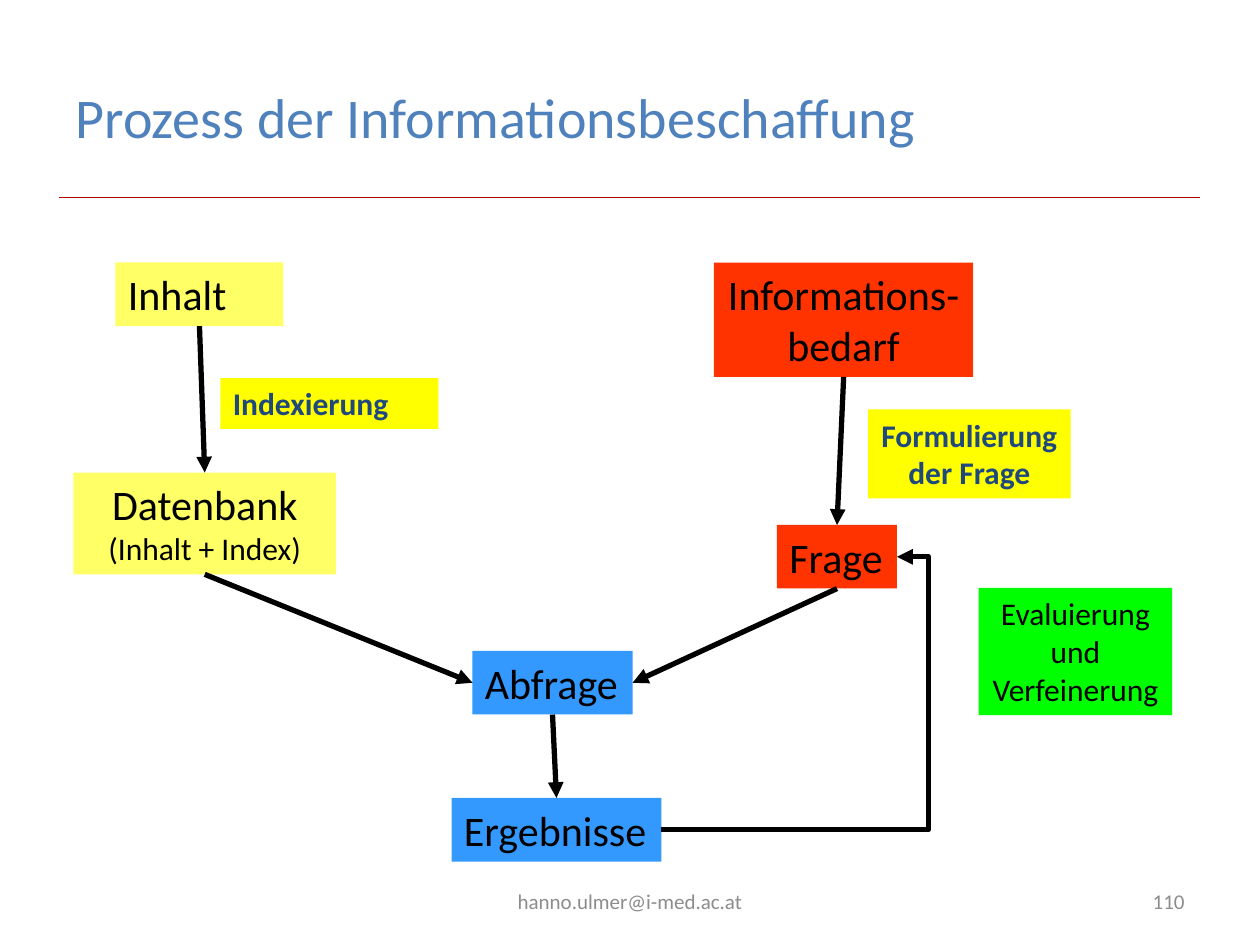
from lxml.etree import SubElement
from pptx import Presentation
from pptx.dml.color import RGBColor
from pptx.enum.shapes import MSO_CONNECTOR, MSO_SHAPE
from pptx.enum.text import MSO_ANCHOR, MSO_AUTO_SIZE, PP_ALIGN
from pptx.oxml.ns import qn
from pptx.util import Pt

COLORS = {
    "title": "4F81BD", "rule": "AC0000", "footer": "8C8C8C",
    "text": "000000", "step": "1F497D",
    "content": "FFFF66", "need": "FF3300", "query": "3399FF",
    "label": "FFFF00", "review": "00FF00",
}
FONT = "Calibri"
TOP, LEFT, BOTTOM, RIGHT = 0, 1, 2, 3
L, C, R = PP_ALIGN.LEFT, PP_ALIGN.CENTER, PP_ALIGN.RIGHT


def rgb(name):
    return RGBColor.from_string(COLORS[name])


def add_run(p, text, size, color, bold=False):
    r = p.add_run()
    r.text = text
    r.font.name = FONT
    r.font.size = Pt(size)
    r.font.bold = bold
    r.font.color.rgb = rgb(color)


def add_title(s, text):
    title = s.shapes.title
    title.left, title.top, title.width, title.height = Pt(36), Pt(21.6), Pt(522.7), Pt(90)
    tf = title.text_frame
    tf.auto_size = MSO_AUTO_SIZE.NONE
    tf.vertical_anchor = MSO_ANCHOR.MIDDLE
    p = tf.paragraphs[0]
    p.alignment = L
    add_run(p, text, 32, "title")


def add_footer(s, text, left, width, align):
    tf = s.shapes.add_textbox(Pt(left), Pt(500.5), Pt(width), Pt(28.75)).text_frame
    tf.word_wrap = True
    tf.vertical_anchor = MSO_ANCHOR.MIDDLE
    p = tf.paragraphs[0]
    p.alignment = align
    add_run(p, text, 12, "footer")


def add_box(s, fill, box, lines, align=L, wrap=False, color="text", bold=False):
    """Add a filled box; each line is a list of (text, size) runs."""
    sp = s.shapes.add_shape(MSO_SHAPE.RECTANGLE, *map(Pt, box))
    sp.shadow.inherit = False
    sp.fill.solid()
    sp.fill.fore_color.rgb = rgb(fill)
    sp.line.fill.background()
    tf = sp.text_frame
    tf.word_wrap = wrap
    tf.auto_size = MSO_AUTO_SIZE.SHAPE_TO_FIT_TEXT
    tf.vertical_anchor = MSO_ANCHOR.TOP
    for i, runs in enumerate(lines):
        p = tf.add_paragraph() if i else tf.paragraphs[0]
        p.alignment = align
        for text, size in runs:
            add_run(p, text, size, color, bold)
    return sp


def add_line(s, kind, ends, color, width):
    line = s.shapes.add_connector(kind, *map(Pt, ends))
    line.line.color.rgb = rgb(color)
    line.line.width = Pt(width)
    SubElement(line._element.spPr, qn("a:effectLst"))
    return line


def add_arrow(s, start, start_side, end, end_side, bend=None):
    """Join two boxes; bend places an elbow as a fraction of the arrow's width."""
    kind = MSO_CONNECTOR.STRAIGHT if bend is None else MSO_CONNECTOR.ELBOW
    arrow = add_line(s, kind, (0, 0, 0, 0), "text", 3)
    arrow.begin_connect(start, start_side)
    arrow.end_connect(end, end_side)
    SubElement(arrow.line._get_or_add_ln(), qn("a:tailEnd"), type="triangle")
    if bend is not None:
        guides = arrow._element.spPr.find(qn("a:prstGeom")).get_or_add_avLst()
        SubElement(guides, qn("a:gd"), name="adj1", fmla=f"val {round(bend * 100000)}")


def main():
    prs = Presentation()
    prs.slide_width, prs.slide_height = Pt(720), Pt(540)
    s = prs.slides.add_slide(prs.slide_layouts[5])

    add_title(s, "Prozess der Informationsbeschaffung")
    add_line(s, MSO_CONNECTOR.STRAIGHT, (34, 112.5, 686, 112.5), "rule", 0.25)
    add_footer(s, "hanno.ulmer@i-med.ac.at", 246, 228, C)
    add_footer(s, "110", 516, 168, R)

    content = add_box(s, "content", (66, 150, 96, 36.35), [[("Inhalt", 24)]], wrap=True)
    database = add_box(s, "content", (42, 270, 150, 58.2),
                       [[("Datenbank ", 24), ("(Inhalt + Index)", 18)]], C, wrap=True)
    query = add_box(s, "query", (270, 372, 91.5, 36.35), [[("Abfrage", 24)]])
    need = add_box(s, "need", (408, 150, 148.2, 65.4),
                   [[("Informations-", 24)], [("bedarf", 24)]], C)
    question = add_box(s, "need", (444, 300, 68.6, 36.35), [[("Frage", 24)]])
    results = add_box(s, "query", (258, 456, 120, 36.35), [[("Ergebnisse", 24)]])
    add_box(s, "review", (559.2, 336, 110.7, 72.7),
            [[("Evaluierung", 18)], [("und", 18)], [("Verfeinerung", 18)]], C)

    add_arrow(s, content, BOTTOM, database, TOP)
    add_arrow(s, database, BOTTOM, query, LEFT)
    add_arrow(s, question, BOTTOM, query, RIGHT)
    add_arrow(s, need, BOTTOM, question, TOP)
    add_arrow(s, results, RIGHT, question, RIGHT, bend=1.134)
    add_arrow(s, query, BOTTOM, results, TOP)

    add_box(s, "label", (126, 216, 124.5, 29.1), [[("Indexierung", 18)]],
            wrap=True, color="step", bold=True)
    add_box(s, "label", (496, 234, 115.8, 50.9),
            [[("Formulierung", 18)], [("der Frage", 18)]], C, color="step", bold=True)

    prs.save("out.pptx")


if __name__ == "__main__":
    main()
